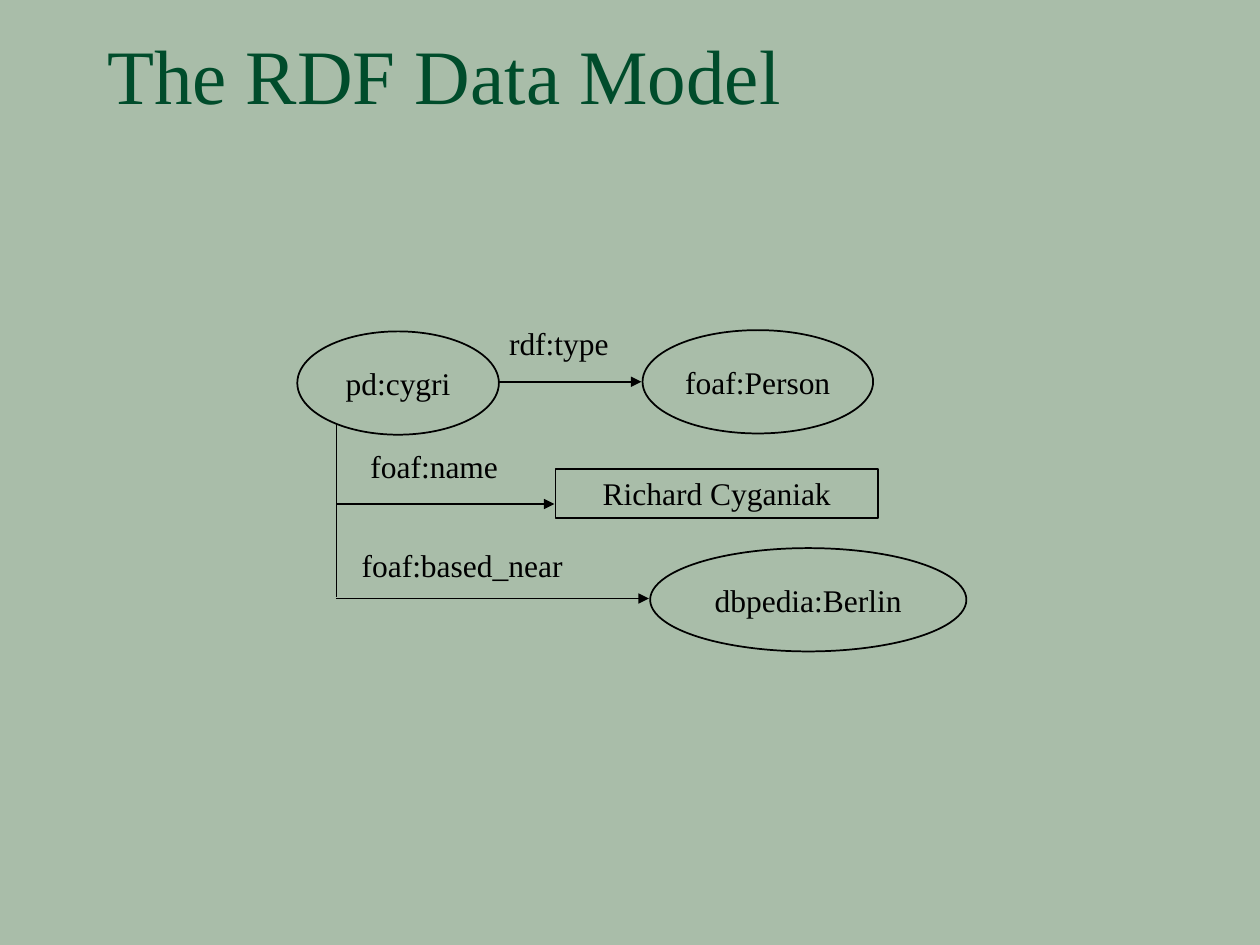
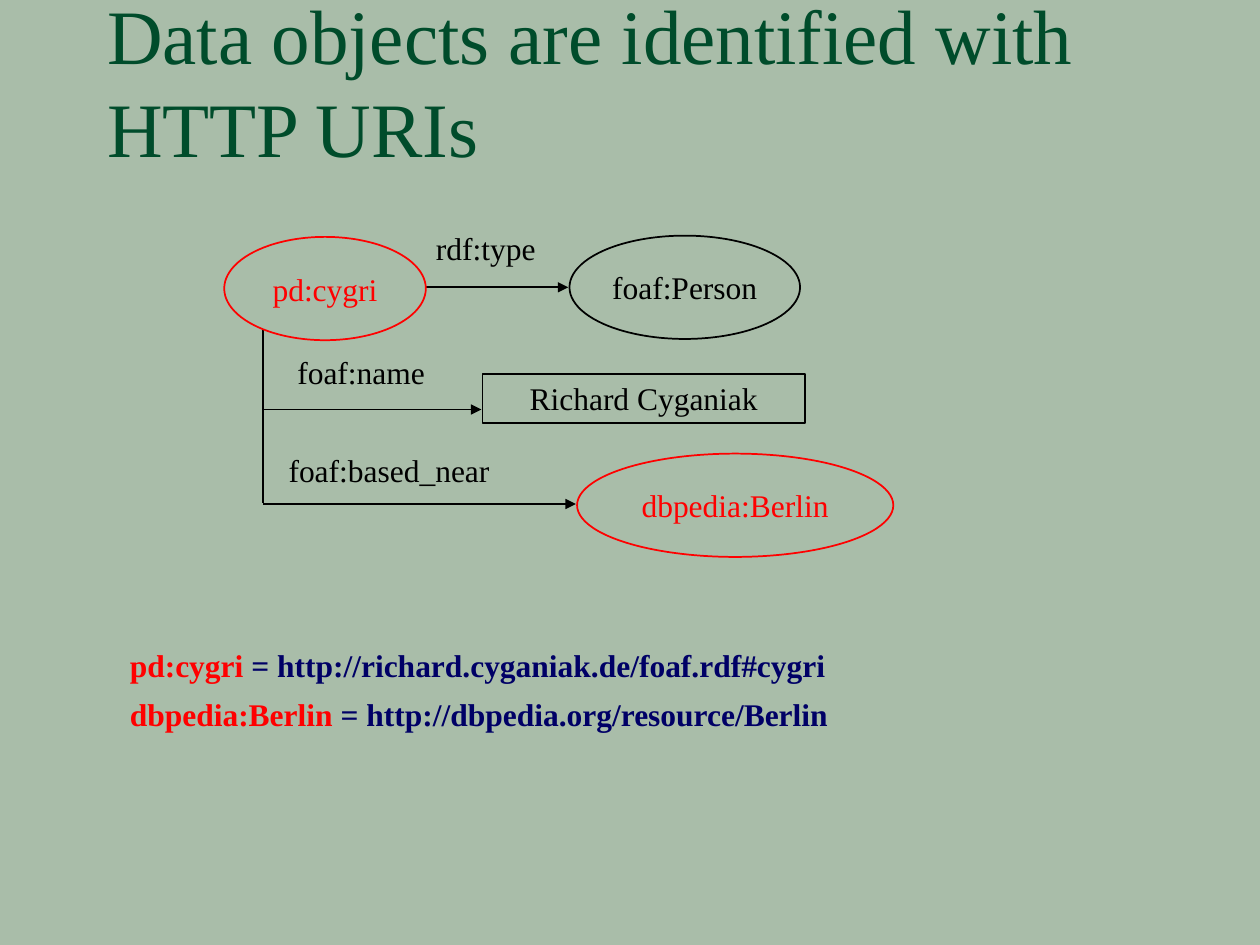
from dataclasses import dataclass

import lxml.etree
import pptx
import pptx.dml.color
import pptx.enum.shapes
import pptx.enum.text
import pptx.oxml.ns
import pptx.slide
import pptx.text.text
import pptx.util

Inches = pptx.util.Inches
Align = pptx.enum.text.PP_ALIGN
Anchor = pptx.enum.text.MSO_ANCHOR
Shape = pptx.enum.shapes.MSO_SHAPE

FONT = "Times New Roman"
SAGE, GREEN, BLACK, RED, NAVY = "A9BDA9", "004C2B", "000000", "FF0000", "000066"


@dataclass
class Node:
    name: str
    x: float
    y: float
    w: float
    h: float = 0.82
    oval: bool = True


@dataclass
class Label:
    text: str
    x: float
    y: float
    w: float


@dataclass
class Link:
    x1: float
    y1: float
    x2: float
    y2: float
    arrow: bool = True


# Graph parts, placed from the top left corner of the graph
NODES = [
    Node("Richard Cyganiak", 2.05, 1.19, 2.56, 0.39, oval=False),
    Node("dbpedia:Berlin", 2.8, 1.82, 2.51),
    Node("foaf:Person", 2.74, 0.09, 1.83),
    Node("pd:cygri", 0, 0.1, 1.6),
]
LABELS = [
    Label("rdf:type", 1.59, 0, 0.98),
    Label("foaf:name", 0.49, 0.98, 1.2),
    Label("foaf:based_near", 0.42, 1.76, 1.79),
]
LINKS = [
    Link(0.31, 0.83, 0.31, 2.21, arrow=False),
    Link(0.31, 1.47, 2.04, 1.47),
    Link(0.31, 2.22, 2.79, 2.22),
    Link(1.6, 0.5, 2.73, 0.5),
]


def color(code: str) -> pptx.dml.color.RGBColor:
    return pptx.dml.color.RGBColor.from_string(code)


def write(frame: pptx.text.text.TextFrame, lines: list[list[tuple[str, str]]], *,
          size: float = 18, bold: bool = False, align: Align = Align.LEFT,
          anchor: Anchor = Anchor.TOP, wrap: bool = False,
          inset: tuple[float, float] = (0.09, 0.04), space: float = 1) -> None:
    """Fill a frame with one paragraph; each line is a list of (text, colour)."""
    frame.word_wrap = wrap
    frame.auto_size = pptx.enum.text.MSO_AUTO_SIZE.NONE
    frame.vertical_anchor = anchor
    frame.margin_left = frame.margin_right = Inches(inset[0])
    frame.margin_top = frame.margin_bottom = Inches(inset[1])
    para = frame.paragraphs[0]
    para.alignment = align
    para.line_spacing = space
    for i, line in enumerate(lines):
        if i:
            para.add_line_break()
        for text, code in line:
            run = para.add_run()
            run.text = text
            run.font.name = FONT
            run.font.size = pptx.util.Pt(size)
            run.font.bold = bold
            run.font.color.rgb = color(code)


def add_title(slide: pptx.slide.Slide, text: str, top: float) -> None:
    title = slide.shapes.title
    title.left, title.top = Inches(0.75), Inches(top)
    title.width, title.height = Inches(8.5), Inches(1.25)
    write(title.text_frame, [[(text, GREEN)]], size=44, anchor=Anchor.BOTTOM,
          wrap=True, inset=(0.1, 0.05))


def add_link(slide: pptx.slide.Slide, link: Link, x: float, y: float) -> None:
    line = slide.shapes.add_connector(
        pptx.enum.shapes.MSO_CONNECTOR.STRAIGHT,
        Inches(x + link.x1), Inches(y + link.y1),
        Inches(x + link.x2), Inches(y + link.y2))
    line.line.color.rgb = color(BLACK)
    line.line.width = pptx.util.Pt(1)
    qn = pptx.oxml.ns.qn
    if link.arrow:
        lxml.etree.SubElement(line.line._get_or_add_ln(), qn("a:tailEnd"),
                              type="triangle")
    lxml.etree.SubElement(line._element.spPr, qn("a:effectLst"))


def add_node(slide: pptx.slide.Slide, node: Node, x: float, y: float, ink: str) -> None:
    shape = slide.shapes.add_shape(
        Shape.OVAL if node.oval else Shape.RECTANGLE,
        Inches(x + node.x), Inches(y + node.y), Inches(node.w), Inches(node.h))
    shape.shadow.inherit = False
    if node.oval:
        shape.fill.solid()
        shape.fill.fore_color.rgb = color(SAGE)
    else:
        shape.fill.background()
    shape.line.color.rgb = color(ink)
    shape.line.width = pptx.util.Pt(1)
    write(shape.text_frame, [[(node.name, ink)]], align=Align.CENTER,
          anchor=Anchor.MIDDLE if node.oval else Anchor.TOP, wrap=not node.oval)


def add_box(slide: pptx.slide.Slide, x: float, y: float, w: float, h: float,
            lines: list[list[tuple[str, str]]], **form) -> None:
    box = slide.shapes.add_textbox(Inches(x), Inches(y), Inches(w), Inches(h))
    write(box.text_frame, lines, **form)


def add_graph(slide: pptx.slide.Slide, x: float, y: float,
              marked: tuple[str, ...] = ()) -> None:
    """Draw the graph at x, y, with the marked nodes in red."""
    for link in LINKS:
        add_link(slide, link, x, y)
    for node in NODES:
        add_node(slide, node, x, y, RED if node.name in marked else BLACK)
    for label in LABELS:
        add_box(slide, x + label.x, y + label.y, label.w, 0.39,
                [[(label.text, BLACK)]])


def main() -> None:
    deck = pptx.Presentation()
    deck.slide_width, deck.slide_height = Inches(10), Inches(7.5)
    fill = deck.slide_master.background.fill
    fill.solid()
    fill.fore_color.rgb = color(SAGE)
    layout = deck.slide_layouts.get_by_name("Title Only")

    model = deck.slides.add_slide(layout)
    add_title(model, "The RDF Data Model", -0.25)
    add_graph(model, 2.36, 2.53)

    uris = {
        "pd:cygri": "http://richard.cyganiak.de/foaf.rdf#cygri",
        "dbpedia:Berlin": "http://dbpedia.org/resource/Berlin",
    }
    naming = deck.slides.add_slide(layout)
    add_title(naming, "Data objects are identified with HTTP URIs", 0.17)
    add_graph(naming, 1.78, 1.78, tuple(uris))
    add_box(naming, 0.94, 5, 5.77, 0.88,
            [[(name, RED), (f" = {uri}", NAVY)] for name, uri in uris.items()],
            bold=True, space=1.3)

    deck.save("out.pptx")


if __name__ == "__main__":
    main()
